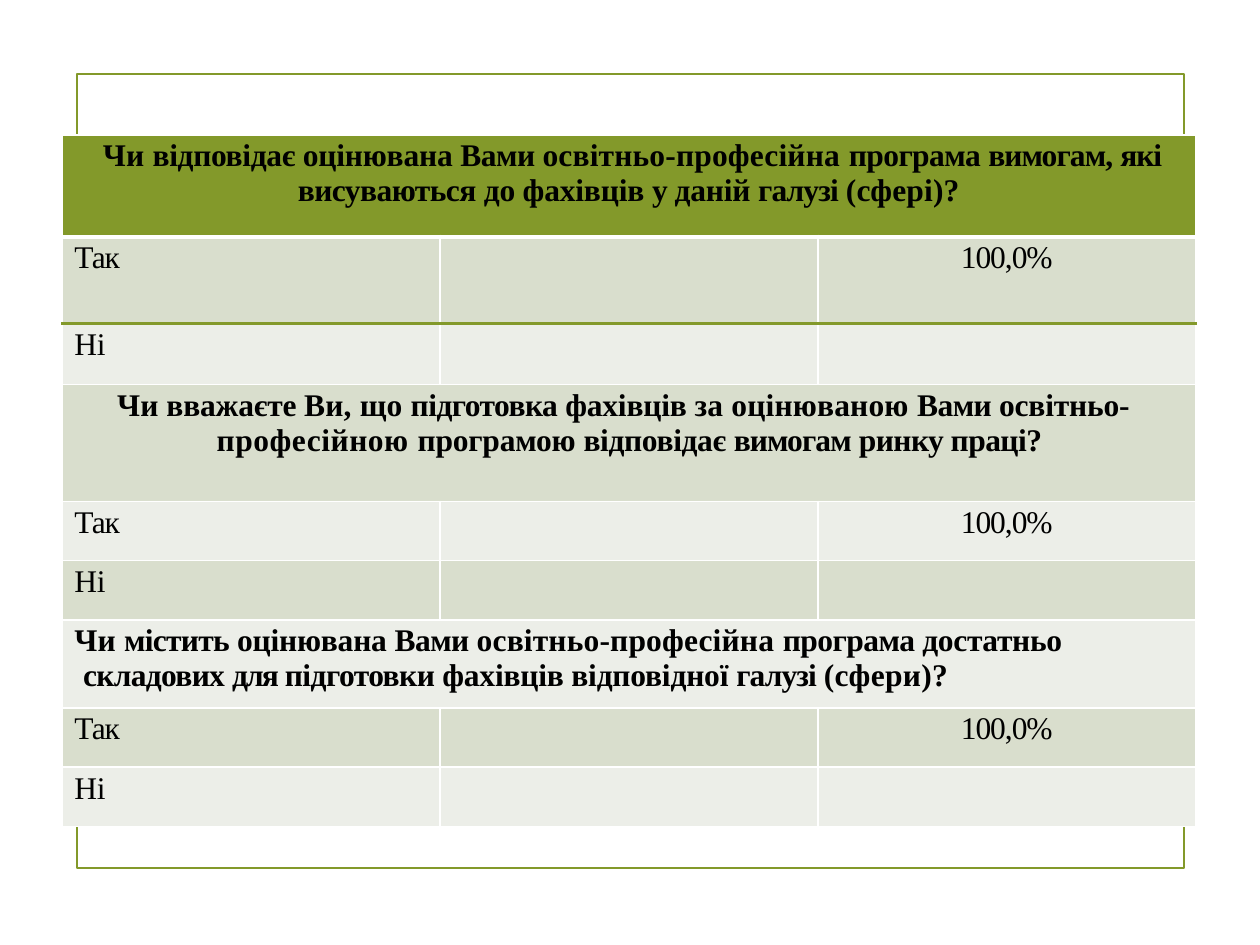
"""Build a slide with a table of three survey questions and their answers."""
import pptx
import pptx.util
import pptx.dml.color
import pptx.enum.shapes
import pptx.enum.text
import pptx.oxml
import pptx.oxml.ns

Inches, Pt = pptx.util.Inches, pptx.util.Pt
RGB = pptx.dml.color.RGBColor.from_string
ALIGN = pptx.enum.text.PP_ALIGN

THEME = dict(font="Times New Roman", size=18, text="000000", accent="83992A",
             dark="D9DECD", light="ECEEE8", line="FFFFFF")


def write(p, runs, bold=False, align=ALIGN.LEFT, left=0, first=0, before=0):
    """Fill a paragraph with (text, letter spacing) runs."""
    p.alignment = align
    p.space_before = Pt(before)
    pPr = p._p.get_or_add_pPr()
    pPr.set("marL", str(Inches(left)))
    pPr.set("indent", str(Inches(first)))
    for text, spacing in runs:
        if text == "\n":
            p.add_line_break()
            continue
        r = p.add_run()
        r.text = text
        r.font.name, r.font.size, r.font.bold = THEME["font"], Pt(THEME["size"]), bold
        r.font.color.rgb = RGB(THEME["text"])
        r._r.get_or_add_rPr().set("spc", str(round(spacing * 100)))


def set_borders(cell, **sides):
    """Draw each side given as (colour, width) and hide the others."""
    for i, side in enumerate("LRTB"):
        color, width = sides.get(side, (None, 0))
        fill = f'<a:solidFill><a:srgbClr val="{color}"/></a:solidFill>' if color else "<a:noFill/>"
        cell._tc.get_or_add_tcPr().insert(i, pptx.oxml.parse_xml(
            f'<a:ln{side} {pptx.oxml.ns.nsdecls("a")} w="{Pt(width)}">{fill}</a:ln{side}>'))


YES, NO, SHARE = [("Так", -0.6)], [("Ні", -0.1)], [("100,0%", -0.6)]
MEETS_DEMANDS = [
    ("Чи ", 0.1), ("відповідає ", -0.2), ("оцінювана ", -0.1), ("Вами ", -0.3),
    ("освітньо-професійна ", 0.1), ("програма ", -0.3), ("вимогам, ", -0.5), ("які", -0.6)]
IN_FIELD = [
    ("висуваються ", -0.3), ("до фахівців ", -0.1), ("у ", -0.6), ("даній ", -0.1),
    ("галузі ", -0.5), ("(сфері)?", 0.1)]
FITS_MARKET = [
    ("Чи", 0.1), (" вважаєте ", -0.1), ("Ви, що ", 0.1), ("підготовка ", -0.3),
    ("фахівців ", -0.1), ("за оцінюваною ", 0.1), ("Вами ", -0.3), ("освітньо-", -0.1),
    ("\n", 0), ("професійною ", 0.3), ("програмою ", -0.1), ("відповідає ", -0.2),
    ("вимогам ", -0.5), ("ринку праці?", -0.3)]
HAS_COMPONENTS = [
    ("Чи ", 0.1), ("містить ", -0.4), ("оцінювана ", -0.1), ("Вами ", -0.3),
    ("освітньо-професійна ", 0.1), ("програма ", -0.3), ("достатньо", -0.2),
    ("\n", 0), ("складових ", -0.4), ("для ", -1.1), ("підготовки ", -0.3),
    ("фахівців відповідної ", -0.1), ("галузі ", -0.5), ("(сфери)?", 0.2)]

prs = pptx.Presentation()
prs.slide_width, prs.slide_height = Inches(10), Inches(7.5)
W, H = prs.slide_width, prs.slide_height
s = prs.slides.add_slide(prs.slide_layouts[6])

frame = s.shapes.add_shape(pptx.enum.shapes.MSO_SHAPE.RECTANGLE,
                           Inches(0.61), Inches(0.59), Inches(8.79), Inches(6.3))
frame.shadow.inherit = False
frame.fill.background()
frame.line.color.rgb, frame.line.width = RGB(THEME["accent"]), Pt(1.25)

row_heights = [0.48, 0.81, 0.69, 0.48, 0.93, 0.47, 0.47, 0.7, 0.47, 0.47, 0.31]
last = len(row_heights) - 1
questions = {1: (MEETS_DEMANDS, dict(align=ALIGN.CENTER, left=0.06)),
             4: (FITS_MARKET, dict(left=1.23, first=-0.79)),
             7: (HAS_COMPONENTS, dict(left=0.17, first=-0.07))}
thin = (THEME["line"], 1)
rules = {2: (THEME["line"], 3), 3: (THEME["accent"], 2.25)}

table = s.shapes.add_table(len(row_heights), 3, Inches(0.49), Inches(0.59),
                           Inches(9), Inches(sum(row_heights))).table
table.first_row = table.horz_banding = False
for column in table.columns:
    column.width = Inches(3)

for n, height in enumerate(row_heights):
    table.rows[n].height = Inches(height)
    outer = n in (0, last)
    for cell in table.rows[n].cells:
        cell.margin_left = cell.margin_right = cell.margin_top = cell.margin_bottom = 0
        if outer:
            cell.fill.background()
            set_borders(cell, **{"T" if n else "B": thin})
            continue
        cell.margin_top = Inches(0.03)
        cell.fill.solid()
        band = "accent" if n == 1 else "light" if n % 2 else "dark"
        cell.fill.fore_color.rgb = RGB(THEME[band])
        set_borders(cell, L=thin, R=thin, T=rules.get(n, thin), B=rules.get(n + 1, thin))
    if outer or n in questions:
        table.cell(n, 0).merge(table.cell(n, 2))
    if outer:
        continue
    tf = table.cell(n, 0).text_frame
    if n in questions:
        runs, layout = questions[n]
        write(tf.paragraphs[0], runs, bold=True, **layout)
    elif n - 1 in questions:
        write(tf.paragraphs[0], YES, left=0.1)
        write(table.cell(n, 2).text_frame.paragraphs[0], SHARE, align=ALIGN.CENTER)
    else:
        write(tf.paragraphs[0], NO, left=0.1)

write(table.cell(1, 0).text_frame.add_paragraph(), IN_FIELD, bold=True, align=ALIGN.CENTER)

prs.save("out.pptx")
